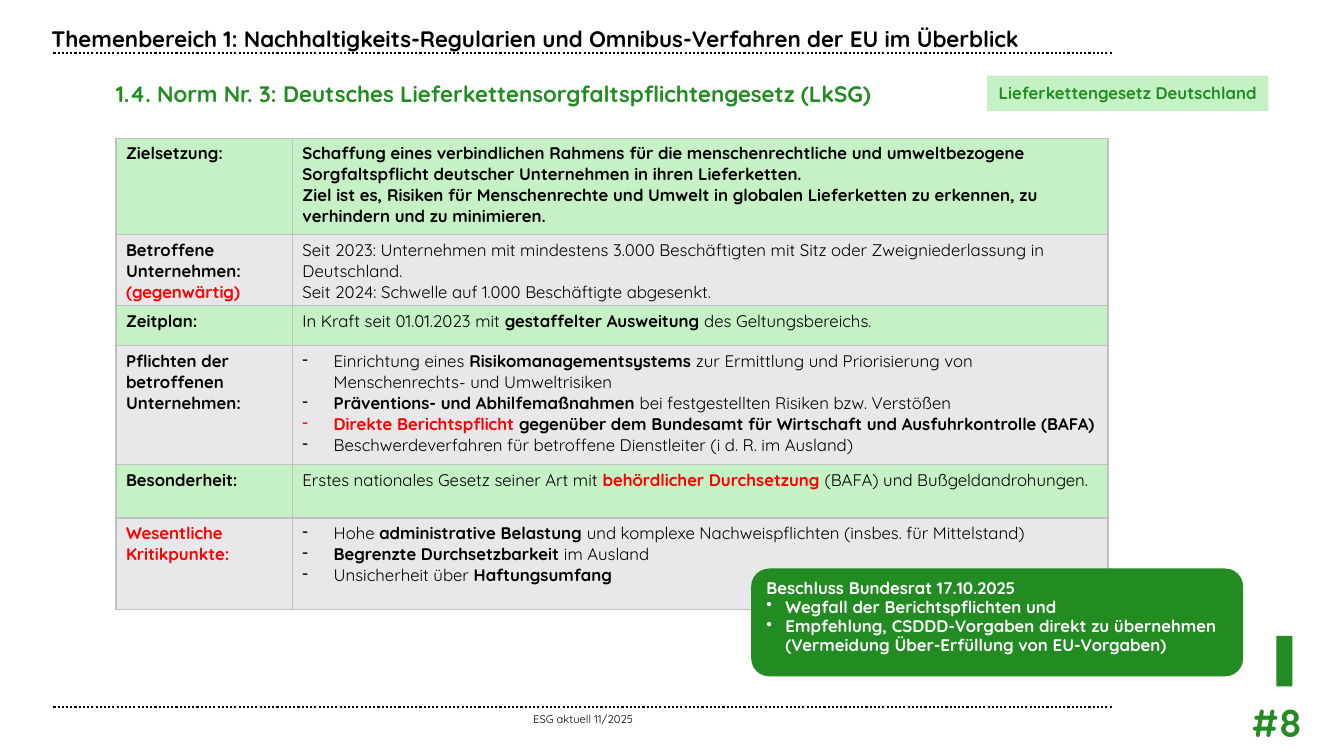
from lxml import etree
from pptx import Presentation
from pptx.dml.color import RGBColor
from pptx.enum.dml import MSO_LINE
from pptx.enum.shapes import MSO_CONNECTOR, MSO_SHAPE
from pptx.enum.text import MSO_ANCHOR, MSO_AUTO_SIZE, PP_ALIGN
from pptx.oxml.ns import qn
from pptx.util import Inches, Pt

LEFT, CENTER, RIGHT = PP_ALIGN.LEFT, PP_ALIGN.CENTER, PP_ALIGN.RIGHT
TOP, MIDDLE = MSO_ANCHOR.TOP, MSO_ANCHOR.MIDDLE
NO_AUTOFIT = MSO_AUTO_SIZE.NONE
STRAIGHT = MSO_CONNECTOR.STRAIGHT
RECT, ROUND_RECT = MSO_SHAPE.RECTANGLE, MSO_SHAPE.ROUNDED_RECTANGLE
DOTTED = MSO_LINE.ROUND_DOT

FONT = "Quicksand"
BLACK, WHITE, RED = "000000", "FFFFFF", "FF0000"
GREEN, LIGHT_GREEN, GREY, BORDER = "228B22", "C5F1C5", "E8E8EA", "BFC0C5"
BOLD = {"bold": True}
ALERT = {"bold": True, "color": RED}

TABLE_ROWS = [
    (0.96, ["Zielsetzung:"], [
        [("Schaffung eines verbindlichen Rahmens für die menschenrechtliche und umweltbezogene "
          "Sorgfaltspflicht deutscher Unternehmen in ihren Lieferketten.", BOLD)],
        [("Ziel ist es, Risiken für Menschenrechte und Umwelt in globalen Lieferketten zu erkennen, "
          "zu verhindern und zu minimieren.", BOLD)]], None),
    (0.7, ["Betroffene Unternehmen:", [("(gegenwärtig)", ALERT)]], [
        "Seit 2023: Unternehmen mit mindestens 3.000 Beschäftigten mit Sitz oder "
        "Zweigniederlassung in Deutschland.",
        "Seit 2024: Schwelle auf 1.000 Beschäftigte abgesenkt."], None),
    (0.4, ["Zeitplan:"], [
        ["In Kraft seit 01.01.2023 mit ", ("gestaffelter Ausweitung", BOLD),
         " des Geltungsbereichs."]], None),
    (1.18, ["Pflichten der betroffenen Unternehmen:"], [
        ["Einrichtung eines ", ("Risikomanagementsystems", BOLD),
         " zur Ermittlung und Priorisierung von Menschenrechts- und Umweltrisiken"],
        [("Präventions- und Abhilfemaßnahmen", BOLD),
         " bei festgestellten Risiken bzw. Verstößen"],
        [("Direkte Berichtspflicht", ALERT),
         (" gegenüber dem Bundesamt für Wirtschaft und Ausfuhrkontrolle (BAFA)", BOLD)],
        "Beschwerdeverfahren für betroffene Dienstleiter (i d. R. im Ausland)"], "-"),
    (0.53, ["Besonderheit:"], [
        ["Erstes nationales Gesetz seiner Art mit ", ("behördlicher Durchsetzung ", ALERT),
         "(BAFA) und Bußgeldandrohungen."]], None),
    (0.91, [[("Wesentliche Kritikpunkte:", ALERT)]], [
        ["Hohe ", ("administrative Belastung ", BOLD),
         "und komplexe Nachweispflichten (insbes. für Mittelstand)"],
        [("Begrenzte Durchsetzbarkeit ", BOLD), "im Ausland"],
        ["Unsicherheit über ", ("Haftungsumfang", BOLD)]], "-"),
]


def rgb(value):
    return RGBColor.from_string(value)


def add_bullet(p, char, indent, color):
    pPr = p._p.get_or_add_pPr()
    pPr.set("marL", str(Inches(indent)))
    pPr.set("indent", str(-Inches(indent)))
    clr = etree.SubElement(pPr, qn("a:buClr"))
    etree.SubElement(clr, qn("a:srgbClr")).set("val", color)
    etree.SubElement(pPr, qn("a:buChar")).set("char", char)


def write(tf, paragraphs, size=12, color=BLACK, bold=False, align=LEFT,
          bullet=None, indent=0.31, first_bullet=0, spacing=None):
    for i, runs in enumerate(paragraphs):
        p = tf.paragraphs[0] if i == 0 else tf.add_paragraph()
        p.alignment = align
        if spacing:
            p.line_spacing = spacing
        runs = [runs] if isinstance(runs, str) else runs
        runs = [(run, {}) if isinstance(run, str) else run for run in runs]
        if bullet and i >= first_bullet:
            add_bullet(p, bullet, indent, runs[0][1].get("color", color))
        for text, fmt in runs:
            r = p.add_run()
            r.text = text
            r.font.name = FONT
            r.font.size = Pt(size)
            r.font.bold = fmt.get("bold", bold)
            r.font.color.rgb = rgb(fmt.get("color", color))


def frame(sp, anchor=TOP, inset=None):
    tf = sp.text_frame
    tf.word_wrap = True
    tf.auto_size = NO_AUTOFIT
    tf.vertical_anchor = anchor
    if inset is not None:
        tf.margin_left = tf.margin_right = tf.margin_top = tf.margin_bottom = Inches(inset)
    return tf


def add_label(s, box, text, anchor=TOP, inset=None, **fmt):
    sp = s.shapes.add_textbox(*map(Inches, box))
    write(frame(sp, anchor, inset), [text], **fmt)


def add_block(s, kind, box, fill):
    sp = s.shapes.add_shape(kind, *map(Inches, box))
    sp.shadow.inherit = False
    sp.fill.solid()
    sp.fill.fore_color.rgb = rgb(fill)
    sp.line.fill.background()
    return sp


def add_rule(s, x, y, width):
    line = s.shapes.add_connector(STRAIGHT, Inches(x), Inches(y), Inches(x + width), Inches(y))
    line.line.color.rgb = rgb(BLACK)
    line.line.width = Pt(1.5)
    line.line.dash_style = DOTTED
    etree.SubElement(line._element.spPr, qn("a:effectLst"))


def add_header(s, box):
    x, y, width, height = box
    title = s.shapes.title
    title.left, title.top, title.width, title.height = map(Inches, box)
    write(frame(title), ["Themenbereich 1: Nachhaltigkeits-Regularien und Omnibus-Verfahren "
                         "der EU im Überblick"], size=16, bold=True)
    add_rule(s, x + 0.12, y + 0.33, 10.51)
    add_label(s, (x + 0.74, y + 0.59, 8.5, 0.35),
              "1.4. Norm Nr. 3: Deutsches Lieferkettensorgfaltspflichtengesetz (LkSG)",
              inset=0, size=16, color=GREEN, bold=True)
    tag = add_block(s, RECT, (x + 9.38, y + 0.55, 2.79, 0.35), LIGHT_GREEN)
    write(frame(tag, MIDDLE), ["Lieferkettengesetz Deutschland"],
          color=GREEN, bold=True, align=CENTER)


def add_footer(s, box):
    x, y, width, height = box
    add_rule(s, x, y, width)
    add_label(s, (x, y + 0.06, width, 0.13), "ESG aktuell 11/2025",
              anchor=MIDDLE, inset=0, size=8, align=CENTER)
    add_label(s, (x + 10.86, y - 0.13, 1.62, 0.57), "#8",
              size=28, color=GREEN, bold=True, align=RIGHT)
    add_block(s, RECT, (x + 12.13, y - 0.7, 0.16, 0.5), GREEN)


def set_borders(cell):
    tcPr = cell._tc.get_or_add_tcPr()
    for i, side in enumerate(("lnL", "lnR", "lnT", "lnB")):
        ln = etree.Element(qn(f"a:{side}"), w=str(Pt(1)))
        fill = etree.SubElement(ln, qn("a:solidFill"))
        etree.SubElement(fill, qn("a:srgbClr")).set("val", BORDER)
        tcPr.insert(i, ln)


def add_law_table(s, box):
    table = s.shapes.add_table(len(TABLE_ROWS), 2, *map(Inches, box)).table
    table.first_row = table.horz_banding = False
    label_width = 1.75
    table.columns[0].width = Inches(label_width)
    table.columns[1].width = Inches(box[2] - label_width)
    for i, (height, label, content, bullet) in enumerate(TABLE_ROWS):
        table.rows[i].height = Inches(height)
        for cell in table.rows[i].cells:
            cell.fill.solid()
            cell.fill.fore_color.rgb = rgb(GREY if i % 2 else LIGHT_GREEN)
            cell.margin_bottom = 0
            set_borders(cell)
        write(table.cell(i, 0).text_frame, label, bold=True)
        write(table.cell(i, 1).text_frame, content, bullet=bullet)


def add_decision(s, box):
    sp = add_block(s, ROUND_RECT, box, GREEN)
    write(frame(sp), ["Beschluss Bundesrat 17.10.2025",
                      "Wegfall der Berichtspflichten und",
                      "Empfehlung, CSDDD-Vorgaben direkt zu übernehmen "
                      "(Vermeidung Über-Erfüllung von EU-Vorgaben)"],
          color=WHITE, bold=True, bullet="•", indent=0.19, first_bullet=1, spacing=0.95)


def main():
    prs = Presentation()
    prs.slide_width, prs.slide_height = Inches(13.33), Inches(7.5)
    s = prs.slides.add_slide(prs.slide_layouts[5])
    add_header(s, (0.41, 0.2, 10.95, 0.37))
    add_footer(s, (0.53, 7.01, 10.51, 0.4))
    add_law_table(s, (1.15, 1.37, 9.84, 4.68))
    add_decision(s, (7.45, 5.64, 4.88, 1.07))
    prs.save("out.pptx")


if __name__ == "__main__":
    main()
